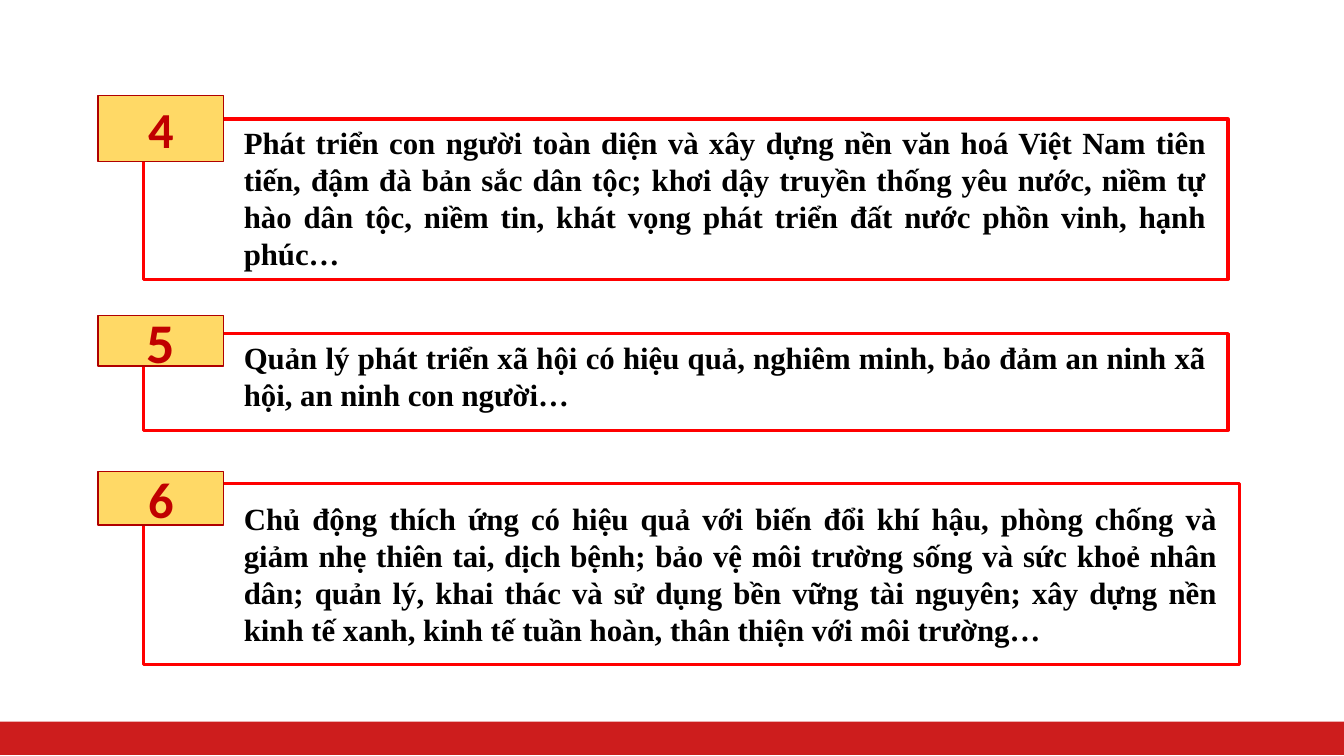
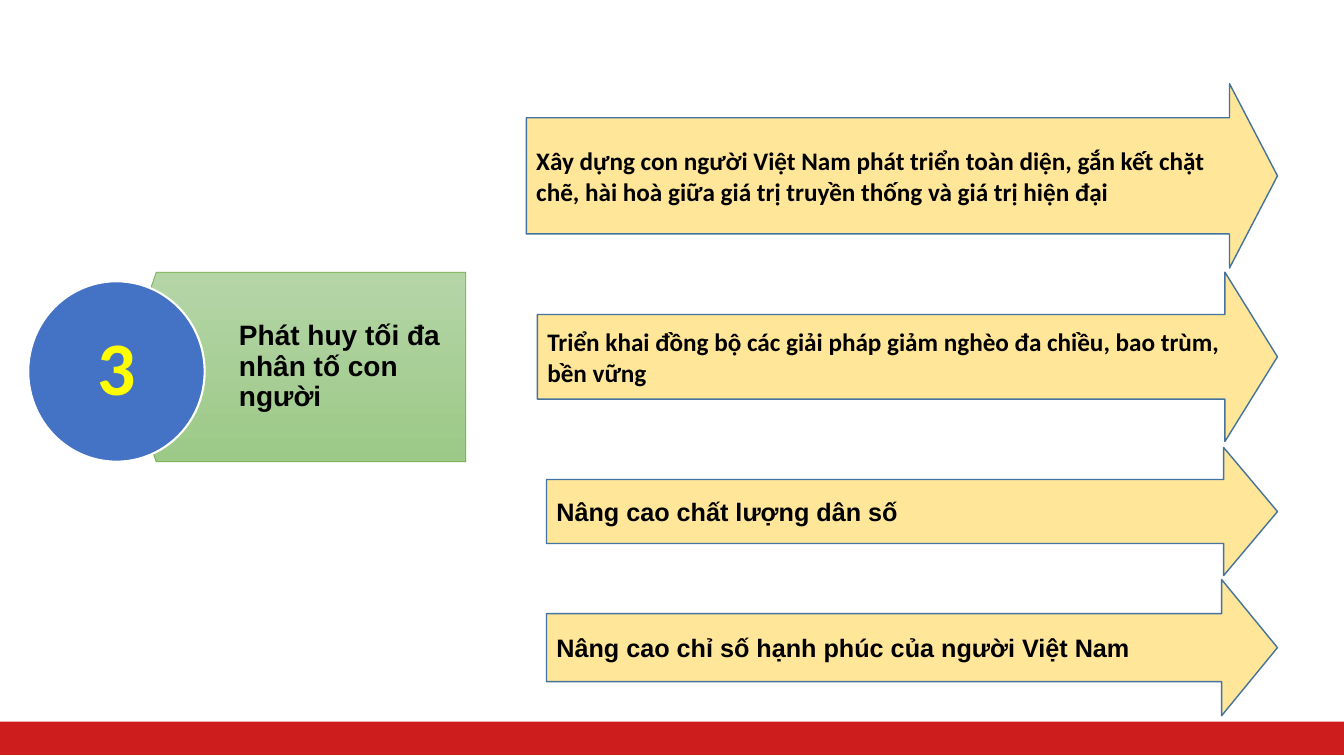
from lxml import etree
from pptx import Presentation
from pptx.dml.color import RGBColor
from pptx.enum.shapes import MSO_SHAPE as Shape
from pptx.enum.text import MSO_ANCHOR as Anchor, PP_ALIGN as Align
from pptx.oxml.ns import qn
from pptx.util import Inches, Pt

COLORS = {
    "band": "CD1D1D",
    "frame": "FF0000",
    "badge": "FFD966",
    "badge_line": "B00000",
    "badge_text": "C00000",
    "arrow": "FFE699",
    "arrow_line": "43739E",
    "panel_top": "B5D5A7",
    "panel_bottom": "9CC987",
    "panel_line": "70AD47",
    "circle": "4472C4",
    "circle_text": "FFFF00",
    "white": "FFFFFF",
    "black": "000000",
}
SLIDE_WIDTH, SLIDE_HEIGHT = 13.33, 7.5

# Number, number size, frame top, width and height, badge rise and height, text drop, text
CARDS = [
    ("4", 36, 1.18, 10.76, 1.59, 0.23, 0.65, 0,
     "Phát triển con người toàn diện và xây dựng nền văn hoá Việt Nam tiên tiến, "
     "đậm đà bản sắc dân tộc; khơi dậy truyền thống yêu nước, niềm tự hào dân tộc, "
     "niềm tin, khát vọng phát triển đất nước phồn vinh, hạnh phúc…"),
    ("5", 40, 3.31, 10.76, 0.96, 0.18, 0.5, 0,
     "Quản lý phát triển xã hội có hiệu quả, nghiêm minh, bảo đảm an ninh xã hội, "
     "an ninh con người…"),
    ("6", 36, 4.8, 10.87, 1.79, 0.12, 0.53, 0.11,
     "Chủ động thích ứng có hiệu quả với biến đổi khí hậu, phòng chống và giảm nhẹ "
     "thiên tai, dịch bệnh; bảo vệ môi trường sống và sức khoẻ nhân dân; quản lý, "
     "khai thác và sử dụng bền vững tài nguyên; xây dựng nền kinh tế xanh, kinh tế "
     "tuần hoàn, thân thiện với môi trường…"),
]

# Left, top, height, shaft share, head share, font, text
ARROWS = [
    (5.22, 0.83, 1.83, 0.63, 0.26, "Calibri",
     "Xây dựng con người Việt Nam phát triển toàn diện, gắn kết chặt chẽ, "
     "hài hoà giữa giá trị truyền thống và giá trị hiện đại"),
    (5.33, 2.7, 1.68, 0.5, 0.31, "Calibri",
     "Triển khai đồng bộ các giải pháp giảm nghèo đa chiều, bao trùm, bền vững"),
    (5.42, 4.44, 1.27, 0.5, 0.42, "Arial", "Nâng cao chất lượng dân số"),
    (5.42, 5.75, 1.35, 0.5, 0.41, "Arial",
     "Nâng cao chỉ số hạnh phúc của người Việt Nam"),
]
ARROW_RIGHT = 12.67


def rgb(name):
    return RGBColor.from_string(COLORS[name])


def style(shape, fill=None, line=None, line_width=1.0, alpha=None):
    """Set fill, outline and opacity (percent), without a shadow."""
    shape.shadow.inherit = False
    if fill:
        shape.fill.solid()
        shape.fill.fore_color.rgb = rgb(fill)
    if alpha is not None:
        color = shape.element.spPr.find(qn("a:solidFill")).find(qn("a:srgbClr"))
        etree.SubElement(color, qn("a:alpha"), val=str(alpha * 1000))
    if line:
        shape.line.color.rgb = rgb(line)
        shape.line.width = Pt(line_width)
    else:
        shape.line.fill.background()


def add_box(slide, kind, left, top, width, height, **look):
    shape = slide.shapes.add_shape(
        kind, Inches(left), Inches(top), Inches(width), Inches(height))
    style(shape, **look)
    return shape


def write(shape, text, size=18, font="Calibri", color="black", align=Align.LEFT,
          anchor=Anchor.MIDDLE, insets=(0.1, 0.05, 0.1, 0.05), spacing=None):
    """Put one bold paragraph in a shape."""
    frame = shape.text_frame
    frame.word_wrap = True
    frame.vertical_anchor = anchor
    (frame.margin_left, frame.margin_top,
     frame.margin_right, frame.margin_bottom) = map(Inches, insets)
    paragraph = frame.paragraphs[0]
    paragraph.alignment = align
    if spacing:
        paragraph.line_spacing = spacing
    run = paragraph.add_run()
    run.text = text
    run.font.size = Pt(size)
    run.font.name = font
    run.font.bold = True
    run.font.color.rgb = rgb(color)


def add_master_band(presentation, slide):
    """Draw the bottom band and move it to the master that all slides share."""
    band = add_box(slide, Shape.RECTANGLE, 0, 7.16, SLIDE_WIDTH, 0.33, fill="band")
    presentation.slide_master.shapes.element.append(band.element)


def add_card(slide, left, top, width, height, number, number_size,
             badge_rise, badge_height, text_drop, text):
    """Framed text with a number badge over its top left corner."""
    add_box(slide, Shape.RECTANGLE, left, top, width, height,
            fill="white", alpha=40, line="frame", line_width=2.25)
    badge = add_box(slide, Shape.RECTANGLE, left - 0.45, top - badge_rise,
                    1.25, badge_height, fill="badge", line="badge_line")
    write(badge, number, size=number_size, color="badge_text", align=Align.CENTER)
    body = slide.shapes.add_textbox(
        Inches(left + 0.9), Inches(top + text_drop),
        Inches(width - 1.02), Inches(height - 2 * text_drop))
    write(body, text, size=22, font="Times New Roman",
          align=Align.JUSTIFY, anchor=Anchor.TOP)


def add_topic(slide, left, top, number, text):
    """Numbered circle in front of a pointed panel."""
    panel_left, panel_right, height, point = left + 0.95, left + 4.34, 1.88, 0.32
    outline = [(panel_right, top + height), (panel_left + point, top + height),
               (panel_left, top + height / 2), (panel_left + point, top),
               (panel_right, top)]
    points = [(Inches(x), Inches(y)) for x, y in outline]
    builder = slide.shapes.build_freeform(*points[0])
    builder.add_line_segments(points[1:], close=True)
    panel = builder.convert_to_shape()
    style(panel, line="panel_line", line_width=0.5)
    panel.fill.gradient()
    panel.fill.gradient_angle = 270
    for stop, name in zip(panel.fill.gradient_stops, ("panel_top", "panel_bottom")):
        stop.color.rgb = rgb(name)
    write(panel, text, size=20, font="Arial",
          insets=(1.14, 0.13, 0.23, 0.13), spacing=0.9)

    circle = add_box(slide, Shape.OVAL, left, top + 0.09, 1.75, 1.79,
                     fill="circle", line="white", line_width=1.5)
    write(circle, number, size=54, color="circle_text", align=Align.CENTER,
          insets=(0.05,) * 4, spacing=0.9)


def add_arrow(slide, left, top, height, shaft, head, font, text):
    arrow = add_box(slide, Shape.RIGHT_ARROW, left, top, ARROW_RIGHT - left, height,
                    fill="arrow", line="arrow_line")
    arrow.adjustments[0], arrow.adjustments[1] = shaft, head
    write(arrow, text, font=font)


def build_cards_slide(slide):
    for number, size, top, width, height, rise, badge_height, drop, text in CARDS:
        add_card(slide, 1.42, top, width, height, number, size,
                 rise, badge_height, drop, text)


def build_topic_slide(slide):
    add_topic(slide, 0.28, 2.7, "3", "Phát huy tối đa nhân tố con người")
    for arrow in ARROWS:
        add_arrow(slide, *arrow)


def main():
    presentation = Presentation()
    presentation.slide_width = Inches(SLIDE_WIDTH)
    presentation.slide_height = Inches(SLIDE_HEIGHT)
    blank = presentation.slide_layouts[6]
    cards_slide = presentation.slides.add_slide(blank)
    add_master_band(presentation, cards_slide)
    build_cards_slide(cards_slide)
    build_topic_slide(presentation.slides.add_slide(blank))
    presentation.save("out.pptx")


if __name__ == "__main__":
    main()
